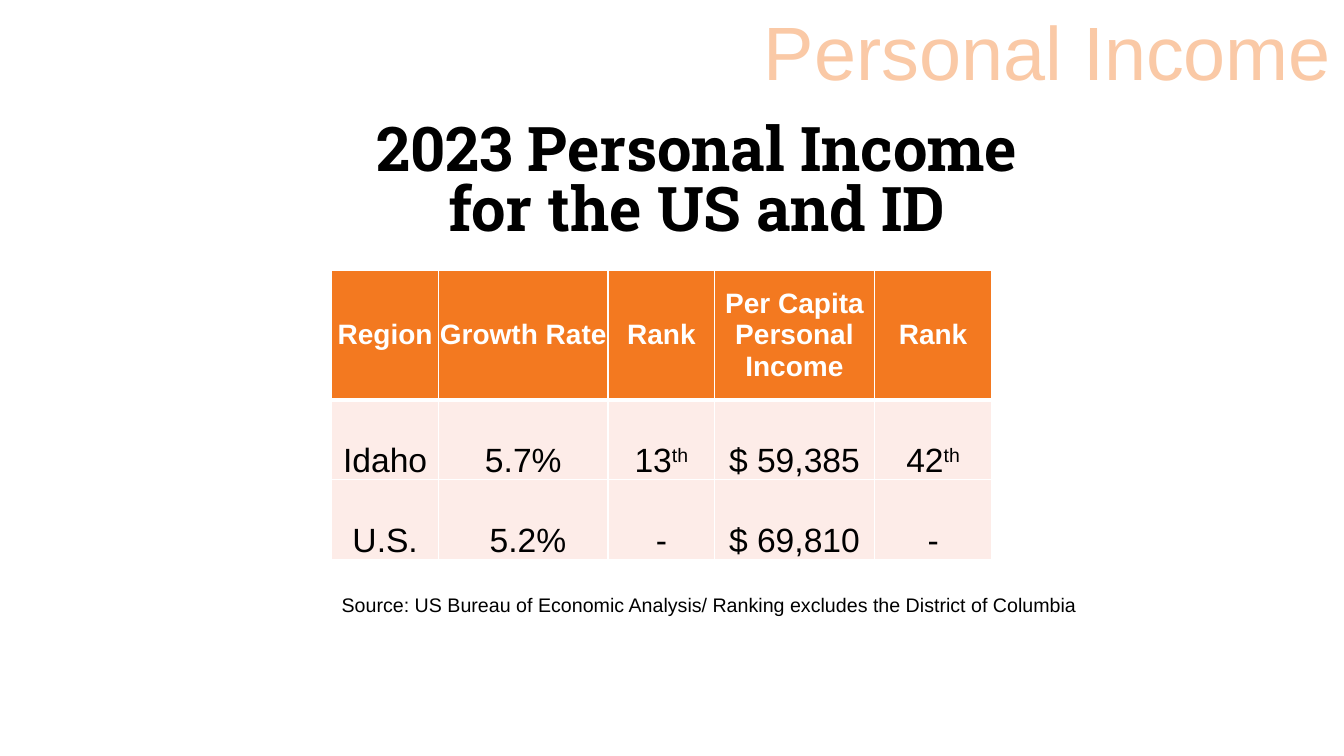
import pptx
import pptx.dml.color
import pptx.enum.text
import pptx.oxml
import pptx.oxml.ns
import pptx.util
from dataclasses import dataclass

Inches = pptx.util.Inches
ALIGN = pptx.enum.text.PP_ALIGN
ANCHOR = pptx.enum.text.MSO_ANCHOR

TITLE = "2023 Personal Income\vfor the US and ID"
SECTION = "Personal Income"
SOURCE = "Source: US Bureau of Economic Analysis/ Ranking excludes the District of Columbia"
HEADER = ["Region", "Growth Rate", "Rank", "Per Capita Personal Income", "Rank"]
# A tuple holds a number and its raised ordinal ending.
REGIONS = [
    ["Idaho", "5.7%", ("13", "th"), "$ 59,385", ("42", "th")],
    ["U.S.", " 5.2%", "-", "$ 69,810", "-"],
]
COLUMN_WIDTHS = [1.06, 1.68, 1.06, 1.58, 1.17]
ROW_HEIGHTS = [1.29, 0.79, 0.79]


@dataclass(frozen=True)
class Theme:
    body_font: str = "Arial"
    title_font: str = "Roboto Slab"
    black: str = "000000"
    white: str = "FFFFFF"
    orange: str = "F37920"
    pale_orange: str = "FAC9A6"
    blush: str = "FDECE8"
    title_size: int = 44
    section_size: int = 54
    header_size: int = 20
    cell_size: int = 24
    source_size: int = 14
    line: float = 1
    heavy_line: float = 3


THEME = Theme()


def color(value):
    return pptx.dml.color.RGBColor.from_string(value)


def write(frame, text, size, ink=THEME.black, font=THEME.body_font, bold=False,
          align=ALIGN.LEFT, spacing=None):
    """Fill the frame's first paragraph; the second part of a tuple is raised."""
    para = frame.paragraphs[0]
    para.alignment = align
    if spacing:
        para.line_spacing = spacing
    parts = text if isinstance(text, tuple) else (text,)
    for index, part in enumerate(parts):
        for number, line in enumerate(part.split("\v")):
            if number:
                para.add_line_break()
            span = para.add_run()
            span.text = line
            span.font.name = font
            span.font.size = pptx.util.Pt(size)
            span.font.bold = bold
            span.font.color.rgb = color(ink)
            if index:
                span.font._element.set("baseline", "30000")


def add_label(page, place, text, **style):
    box = page.shapes.add_textbox(*map(Inches, place))
    box.text_frame.word_wrap = False
    write(box.text_frame, text, **style)


def set_borders(cell, bottom):
    properties = cell._tc.get_or_add_tcPr()
    sides = {"L": THEME.line, "R": THEME.line, "T": THEME.line, "B": bottom}
    for index, (side, width) in enumerate(sides.items()):
        properties.insert(index, pptx.oxml.parse_xml(
            f'<a:ln{side} {pptx.oxml.ns.nsdecls("a")} w="{pptx.util.Pt(width)}">'
            f'<a:solidFill><a:srgbClr val="{THEME.white}"/></a:solidFill></a:ln{side}>'))


def format_cell(cell, text, is_header):
    cell.margin_left = cell.margin_right = cell.margin_top = cell.margin_bottom = 0
    cell.vertical_anchor = ANCHOR.MIDDLE if is_header else ANCHOR.BOTTOM
    cell.fill.solid()
    cell.fill.fore_color.rgb = color(THEME.orange if is_header else THEME.blush)
    set_borders(cell, THEME.heavy_line if is_header else THEME.line)
    write(cell.text_frame, text, bold=is_header, align=ALIGN.CENTER,
          size=THEME.header_size if is_header else THEME.cell_size,
          ink=THEME.white if is_header else THEME.black)


def add_title(page):
    title = page.shapes.title
    title.left, title.top, title.width, title.height = map(Inches, (1.06, 1.18, 11.71, 1.22))
    frame = title.text_frame
    frame.word_wrap = True
    frame.auto_size = pptx.enum.text.MSO_AUTO_SIZE.NONE
    frame.vertical_anchor = ANCHOR.TOP
    write(frame, TITLE, THEME.title_size, font=THEME.title_font, bold=True,
          align=ALIGN.CENTER, spacing=0.81)


def add_income_table(page):
    rows = [HEADER] + REGIONS
    place = map(Inches, (3.29, 2.68, sum(COLUMN_WIDTHS), sum(ROW_HEIGHTS)))
    table = page.shapes.add_table(len(rows), len(HEADER), *place).table
    table.horz_banding = False
    for column, width in zip(table.columns, COLUMN_WIDTHS):
        column.width = Inches(width)
    for index, (row, height, texts) in enumerate(zip(table.rows, ROW_HEIGHTS, rows)):
        row.height = Inches(height)
        for cell, text in zip(row.cells, texts):
            format_cell(cell, text, is_header=index == 0)


def main():
    deck = pptx.Presentation()
    deck.slide_width, deck.slide_height = Inches(13.33), Inches(7.5)
    page = deck.slides.add_slide(deck.slide_layouts.get_by_name("Title Only"))
    add_title(page)
    add_label(page, (3.29, 5.83, 7.6, 0.34), SOURCE, size=THEME.source_size)
    add_income_table(page)
    add_label(page, (7.45, 0, 5.88, 1.01), SECTION, size=THEME.section_size,
              ink=THEME.pale_orange, align=ALIGN.CENTER)
    deck.save("out.pptx")


if __name__ == "__main__":
    main()
